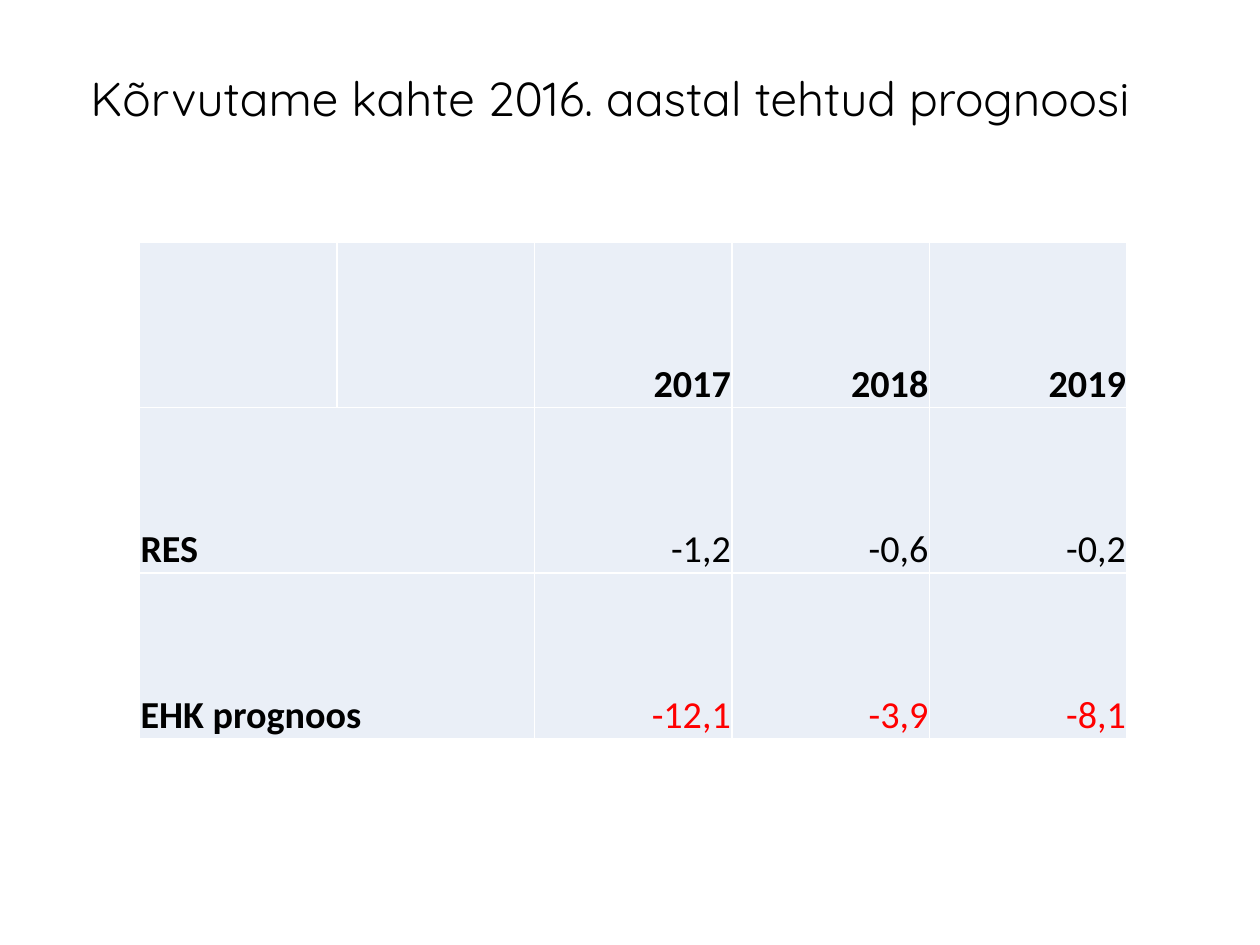
from lxml.etree import SubElement
from pptx import Presentation
from pptx.dml.color import RGBColor
from pptx.enum.text import MSO_ANCHOR as ANCHOR, PP_ALIGN as ALIGN
from pptx.oxml.ns import qn
from pptx.util import Cm, Inches, Pt

BLACK = RGBColor(0x00, 0x00, 0x00)
RED = RGBColor(0xFF, 0x00, 0x00)
WHITE = RGBColor(0xFF, 0xFF, 0xFF)
PALE_BLUE = RGBColor(0xEA, 0xEF, 0xF7)

FORECASTS = [
    ("", "", "2017", "2018", "2019"),
    ("RES", "", "-1,2", "-0,6", "-0,2"),
    ("EHK prognoos", "", "-12,1", "-3,9", "-8,1"),
]


def add_run(p, text, font, size, color, bold=False):
    r = p.add_run()
    r.text = text
    r.font.name, r.font.size, r.font.bold = font, Pt(size), bold
    r.font.color.rgb = color


def add_title(slide, text, left, top, width, height):
    tf = slide.shapes.add_textbox(left, top, width, height).text_frame
    tf.word_wrap = True
    tf.margin_left = tf.margin_right = tf.margin_top = tf.margin_bottom = 0
    p = tf.paragraphs[0]
    p.line_spacing = Pt(37)
    p.space_after = Pt(10)
    add_run(p, text, "Quicksand", 30, BLACK)


def style_cell(cell):
    tc_pr = cell._tc.get_or_add_tcPr()
    for side in ("a:lnL", "a:lnR", "a:lnT", "a:lnB"):
        ln = SubElement(tc_pr, qn(side), w=str(Pt(1)))
        fill = SubElement(ln, qn("a:solidFill"))
        SubElement(fill, qn("a:srgbClr"), val=str(WHITE))
    cell.fill.solid()
    cell.fill.fore_color.rgb = PALE_BLUE
    cell.vertical_anchor = ANCHOR.BOTTOM
    cell.margin_left = cell.margin_right = cell.margin_top = Inches(0.01)
    cell.margin_bottom = 0


def add_forecast_table(slide, rows, left, top, width, height):
    table = slide.shapes.add_table(len(rows), len(rows[0]), left, top, width, height).table
    table.first_row = table.horz_banding = False
    for i, row in enumerate(rows):
        for j, text in enumerate(row):
            cell = table.cell(i, j)
            style_cell(cell)
            if text:
                p = cell.text_frame.paragraphs[0]
                p.alignment = ALIGN.RIGHT if j else ALIGN.LEFT
                is_heading = i == 0 or j == 0
                color = RED if i == 2 and j else BLACK
                add_run(p, text, "Calibri", 24, color, is_heading)
        if i:
            table.cell(i, 0).merge(table.cell(i, 1))


def main():
    prs = Presentation()
    prs.slide_width, prs.slide_height = Cm(28), Cm(21)
    slide = prs.slides.add_slide(prs.slide_layouts[6])
    add_title(slide, "Kõrvutame kahte 2016. aastal tehtud prognoosi",
              Inches(0.79), Inches(0.59), Inches(9.45), Inches(7.09))
    add_forecast_table(slide, FORECASTS,
                       Inches(1.22), Inches(2.12), Inches(8.64), Inches(4.34))
    prs.save("out.pptx")


if __name__ == "__main__":
    main()
